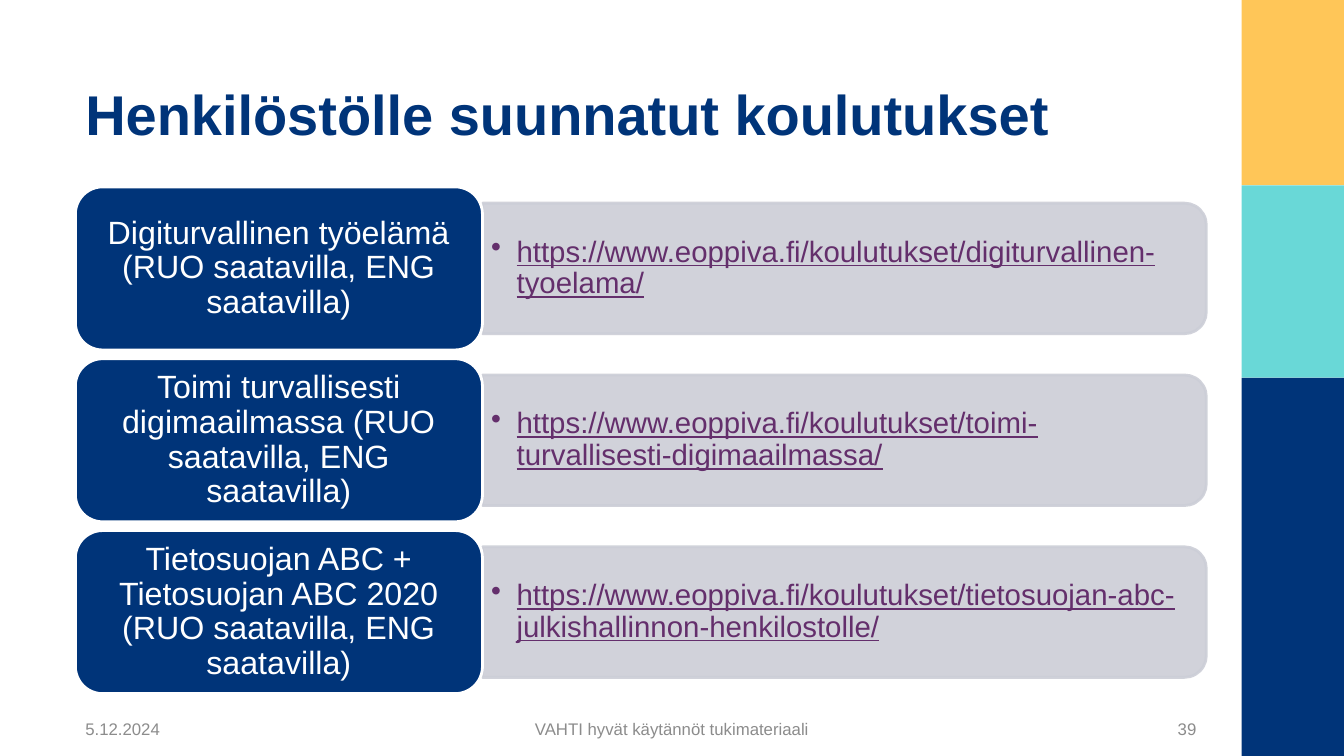
from lxml.etree import SubElement
from pptx import Presentation
from pptx.dml.color import RGBColor
from pptx.enum.shapes import MSO_SHAPE as Preset
from pptx.enum.text import MSO_ANCHOR as Anchor, PP_ALIGN as Align
from pptx.oxml.ns import qn
from pptx.util import Cm, Pt

NAVY, YELLOW, TURQUOISE = "003479", "FFC658", "69D8D7"
GREY, PURPLE, WHITE, FOOTER_GREY = "CCCED7", "642F6C", "FFFFFF", "8C8C8C"

COURSES = [
    ("Digiturvallinen työelämä (RUO saatavilla, ENG saatavilla)",
     "https://www.eoppiva.fi/koulutukset/digiturvallinen-tyoelama/"),
    ("Toimi turvallisesti digimaailmassa (RUO saatavilla, ENG saatavilla)",
     "https://www.eoppiva.fi/koulutukset/toimi-turvallisesti-digimaailmassa/"),
    ("Tietosuojan ABC + Tietosuojan ABC 2020 (RUO saatavilla, ENG saatavilla)",
     "https://www.eoppiva.fi/koulutukset/tietosuojan-abc-julkishallinnon-henkilostolle/"),
]
LEFT, FIRST_TOP, ROW_PITCH = 1.9, 4.71, 4.33
CARD_WIDTH, CARD_HEIGHT = 10.26, 4.11
BAR_LENGTH, BAR_THICKNESS = 18.24, 3.29
LINK_WIDTH, LINK_HEIGHT = 18.08, 2.97


def rgb(color):
    return RGBColor.from_string(color)


def add_block(slide, preset, left, top, width, height, fill, line=None):
    shape = slide.shapes.add_shape(preset, Cm(left), Cm(top), Cm(width), Cm(height))
    shape.shadow.inherit = False
    shape.fill.solid()
    shape.fill.fore_color.rgb = rgb(fill)
    if line:
        shape.line.color.rgb = rgb(line)
        shape.line.width = Pt(2)
    else:
        shape.line.fill.background()
    return shape


def write(shape, text, size, color, align=Align.LEFT, anchor=Anchor.MIDDLE,
          bold=False, line_spacing=None, bullet=False):
    frame = shape.text_frame
    frame.word_wrap = True
    frame.vertical_anchor = anchor
    paragraph = frame.paragraphs[0]
    paragraph.text = text
    paragraph.alignment = align
    paragraph.line_spacing = line_spacing
    if bullet:
        add_bullet(paragraph)
    font = paragraph.font
    font.name, font.size, font.bold = "Arial", Pt(size), bold
    font.underline = bullet
    font.color.rgb = rgb(color)


def add_bullet(paragraph):
    properties = paragraph._p.get_or_add_pPr()
    properties.set("marL", str(Cm(0.64)))
    properties.set("indent", str(-Cm(0.64)))
    SubElement(properties, qn("a:buChar")).set("char", "•")


def add_text(slide, left, top, width, height, text, size, color, **style):
    box = slide.shapes.add_textbox(Cm(left), Cm(top), Cm(width), Cm(height))
    write(box, text, size, color, **style)
    return box


def set_opacity(shape, percent):
    for color in shape._element.spPr.iter(qn("a:srgbClr")):
        SubElement(color, qn("a:alpha")).set("val", str(percent * 1000))


def add_course(slide, top, name, link):
    """Draw a card and, to its right, a bar turned by 90° with the link on it."""
    middle = top + CARD_HEIGHT / 2
    bar_left = LEFT + CARD_WIDTH
    bar = add_block(slide, Preset.ROUND_2_SAME_RECTANGLE,
                    bar_left + (BAR_LENGTH - BAR_THICKNESS) / 2,
                    middle - BAR_LENGTH / 2,
                    BAR_THICKNESS, BAR_LENGTH, GREY, GREY)
    bar.rotation = 90
    set_opacity(bar, 90)
    link_box = add_text(slide, bar_left, middle - LINK_HEIGHT / 2, LINK_WIDTH, LINK_HEIGHT,
                        link, 21, PURPLE, line_spacing=0.9, bullet=True)
    link_box.text_frame.margin_left = link_box.text_frame.margin_right = Cm(0.22)
    card = add_block(slide, Preset.ROUNDED_RECTANGLE, LEFT, top,
                     CARD_WIDTH, CARD_HEIGHT, NAVY, WHITE)
    write(card, name, 23, WHITE, align=Align.CENTER, line_spacing=0.9)


def add_side_band(slide):
    for top, height, color in ((0, 4.67, YELLOW), (4.67, 4.85, TURQUOISE), (9.52, 9.53, NAVY)):
        add_block(slide, Preset.RECTANGLE, 31.29, top, 2.58, height, color)


def add_footer(slide):
    for left, width, text, align in (
            (LEFT, 4.19, "5.12.2024", Align.LEFT),
            (8.86, 16.15, "VAHTI hyvät käytännöt tukimateriaali", Align.CENTER),
            (28.09, 2.31, "39", Align.RIGHT)):
        add_text(slide, left, 18.06, width, 0.61, text, 12, FOOTER_GREY, align=align)


def main():
    presentation = Presentation()
    presentation.slide_width, presentation.slide_height = Cm(33.87), Cm(19.05)
    slide = presentation.slides.add_slide(presentation.slide_layouts[6])
    add_side_band(slide)
    add_text(slide, LEFT, 0.41, 28.5, 3.4, "Henkilöstölle suunnatut koulutukset",
             40, NAVY, anchor=Anchor.BOTTOM, bold=True)
    for row, (name, link) in enumerate(COURSES):
        add_course(slide, FIRST_TOP + row * ROW_PITCH, name, link)
    add_footer(slide)
    presentation.save("out.pptx")


if __name__ == "__main__":
    main()
